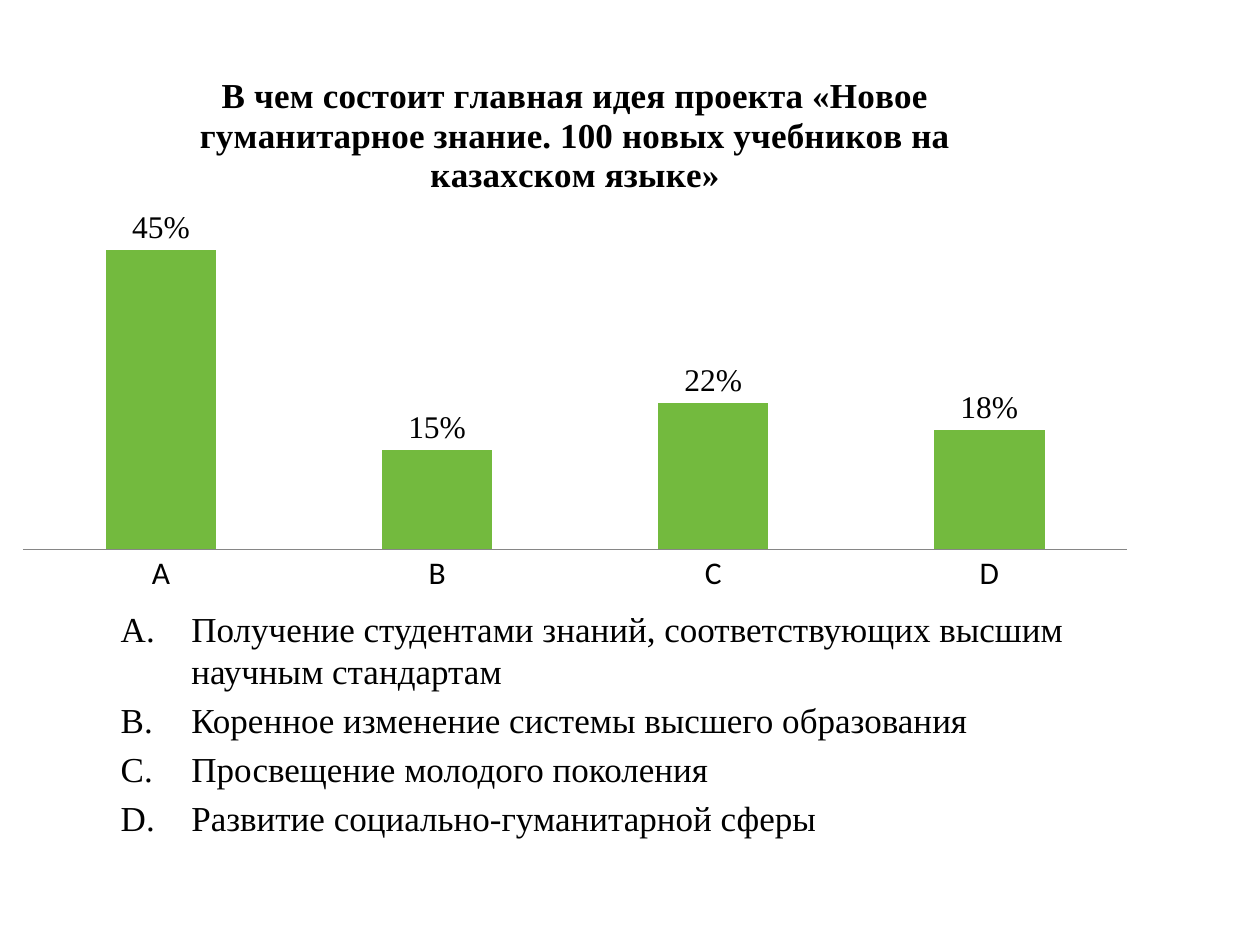
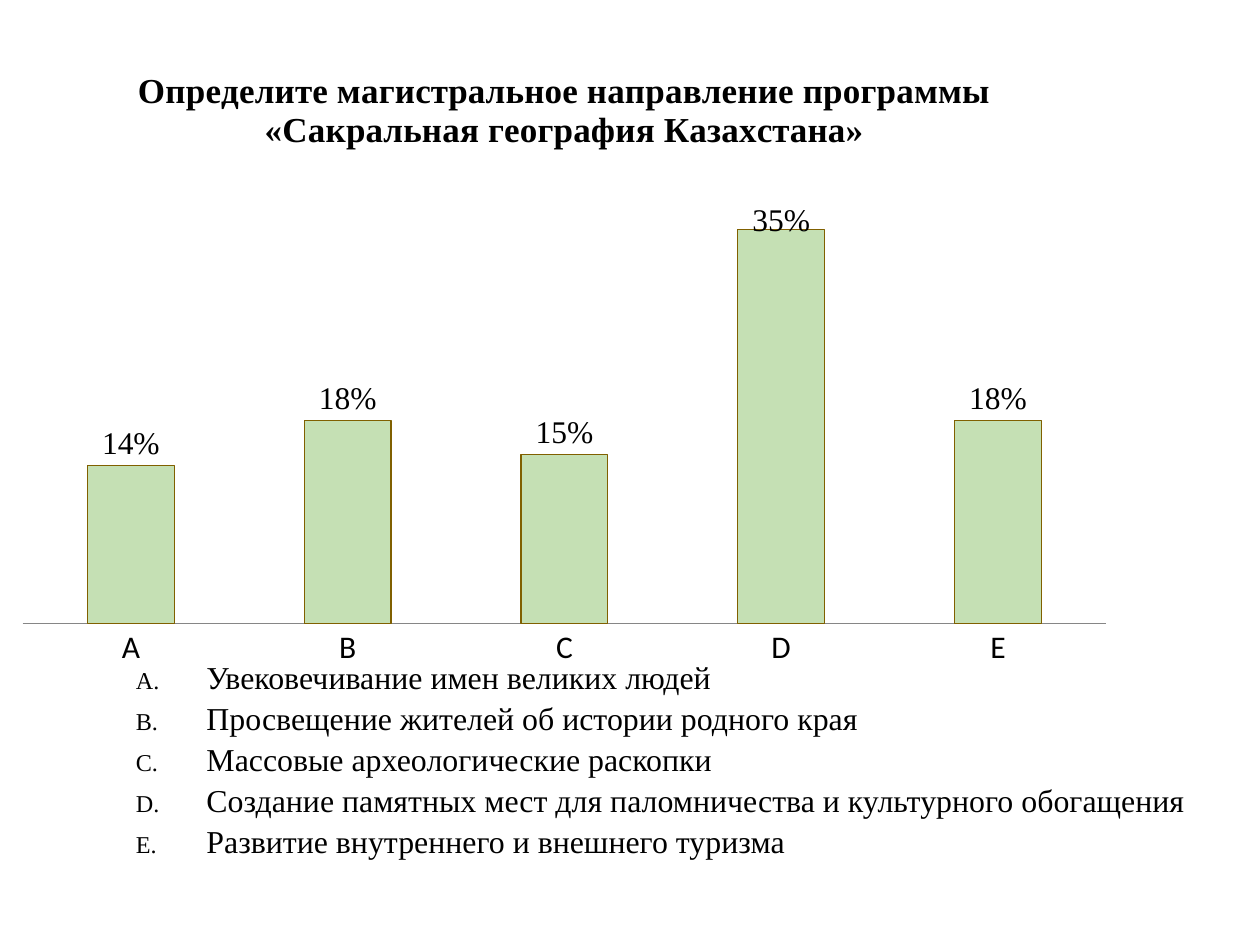
from dataclasses import dataclass
from typing import Optional

from lxml.etree import SubElement
from pptx import Presentation
from pptx.chart.data import CategoryChartData
from pptx.dml.color import RGBColor
from pptx.enum.chart import XL_CHART_TYPE, XL_LABEL_POSITION, XL_TICK_MARK
from pptx.oxml import parse_xml
from pptx.oxml.ns import nsdecls, qn
from pptx.util import Inches, Pt

BLACK = RGBColor(0x00, 0x00, 0x00)
AXIS_GRAY = RGBColor(0x86, 0x86, 0x86)
GREEN = RGBColor(0x73, 0xBA, 0x3E)
PALE_GREEN = RGBColor(0xC5, 0xE0, 0xB4)
OLIVE = RGBColor(0x80, 0x60, 0x00)
SERIF = "Times New Roman"
SANS = "Calibri"
PERCENT = "0%"
INDENT = Inches(0.56)


@dataclass
class Box:
    left: float
    top: float
    width: float
    height: float

    def lengths(self):
        return [Inches(n) for n in (self.left, self.top, self.width, self.height)]


@dataclass
class Question:
    title: str
    answers: dict[str, float]
    chart_box: Box
    answers_box: Box
    fill: RGBColor
    text_size: float
    space_before: float
    outline: Optional[RGBColor] = None
    overlap: int = 0
    line_spacing: Optional[float] = None
    bullet_percent: int = 100
    lowered_label: Optional[int] = None


QUESTIONS = [
    Question(
        title="В чем состоит главная идея проекта «Новое гуманитарное знание. "
              "100 новых учебников на казахском языке»",
        answers={
            "Получение студентами знаний, соответствующих высшим научным стандартам": 0.45,
            "Коренное изменение системы высшего образования": 0.15,
            "Просвещение молодого поколения": 0.22,
            "Развитие социально-гуманитарной сферы": 0.18,
        },
        chart_box=Box(0, 0.39, 9.13, 4.4),
        answers_box=Box(0.86, 4.77, 8.61, 2.4),
        fill=GREEN,
        text_size=20,
        space_before=4,
    ),
    Question(
        title="Определите магистральное направление программы "
              "«Сакральная география Казахстана»",
        answers={
            "Увековечивание имен великих людей": 0.14,
            "Просвещение жителей об истории родного края": 0.18,
            "Массовые археологические раскопки": 0.15,
            "Создание памятных мест для паломничества и культурного обогащения": 0.35,
            "Развитие внутреннего и внешнего туризма": 0.18,
        },
        chart_box=Box(0, 0.33, 8.96, 5.06),
        answers_box=Box(0.98, 5.23, 9.02, 1.81),
        fill=PALE_GREEN,
        text_size=18.2,
        space_before=6,
        outline=OLIVE,
        overlap=-25,
        line_spacing=0.8,
        bullet_percent=76,
        lowered_label=3,
    ),
]


def set_font(font, name: str, size: float, bold: bool = False) -> None:
    font.name = name
    font.size = Pt(size)
    font.bold = bold
    font.color.rgb = BLACK


def lower_label(point) -> None:
    """Move one value label slightly down from the end of its column."""
    label = point.data_label
    label.position = XL_LABEL_POSITION.OUTSIDE_END
    set_font(label.font, SERIF, 18)
    layout = parse_xml(
        f'<c:layout {nsdecls("c")}><c:manualLayout>'
        '<c:x val="0"/><c:y val="0.02"/></c:manualLayout></c:layout>')
    dLbl = point.data_label._dLbl
    dLbl.find(qn("c:idx")).addnext(layout)


def add_answer_chart(s, q: Question) -> None:
    data = CategoryChartData(number_format=PERCENT)
    data.categories = "ABCDE"[:len(q.answers)]
    data.add_series(q.title, q.answers.values())
    chart = s.shapes.add_chart(
        XL_CHART_TYPE.COLUMN_CLUSTERED, *q.chart_box.lengths(), data).chart
    set_font(chart.font, SANS, 18)
    chart.has_legend = False
    chart.has_title = True
    r = chart.chart_title.text_frame.paragraphs[0].add_run()
    r.text = q.title
    set_font(r.font, SERIF, 20, bold=True)

    chart.value_axis.visible = False
    chart.value_axis.has_major_gridlines = False
    axis = chart.category_axis
    axis.major_tick_mark = XL_TICK_MARK.NONE
    axis.format.line.color.rgb = AXIS_GRAY
    axis.format.line.width = Pt(0.75)

    plot = chart.plots[0]
    plot.vary_by_categories = False
    plot.gap_width = 150
    plot.overlap = q.overlap
    series = plot.series[0]
    series.format.fill.solid()
    series.format.fill.fore_color.rgb = q.fill
    if q.outline is not None:
        series.format.line.color.rgb = q.outline
        series.format.line.width = Pt(0.75)

    labels = series.data_labels
    labels.show_value = True
    labels.number_format = PERCENT
    labels.number_format_is_linked = False
    labels.position = XL_LABEL_POSITION.OUTSIDE_END
    set_font(labels.font, SERIF, 18)
    if q.lowered_label is not None:
        lower_label(series.points[q.lowered_label])


def add_letter_bullet(p, percent: int) -> None:
    pPr = p._p.get_or_add_pPr()
    pPr.set("marL", str(INDENT))
    pPr.set("indent", str(-INDENT))
    SubElement(pPr, qn("a:buSzPct"), val=str(percent * 1000))
    SubElement(pPr, qn("a:buFont"), typeface=SERIF)
    SubElement(pPr, qn("a:buAutoNum"), type="alphaUcPeriod")


def add_answer_list(s, q: Question) -> None:
    tf = s.shapes.add_textbox(*q.answers_box.lengths()).text_frame
    tf.word_wrap = True
    for i, answer in enumerate(q.answers):
        p = tf.add_paragraph() if i else tf.paragraphs[0]
        add_letter_bullet(p, q.bullet_percent)
        p.space_before = Pt(q.space_before if i else 0)
        if q.line_spacing is not None:
            p.line_spacing = q.line_spacing
        r = p.add_run()
        r.text = answer
        set_font(r.font, SERIF, q.text_size)


def main() -> None:
    prs = Presentation()
    prs.slide_width, prs.slide_height = Inches(10), Inches(7.5)
    blank = prs.slide_layouts[6]
    for q in QUESTIONS:
        s = prs.slides.add_slide(blank)
        add_answer_chart(s, q)
        add_answer_list(s, q)
    prs.save("out.pptx")


if __name__ == "__main__":
    main()
